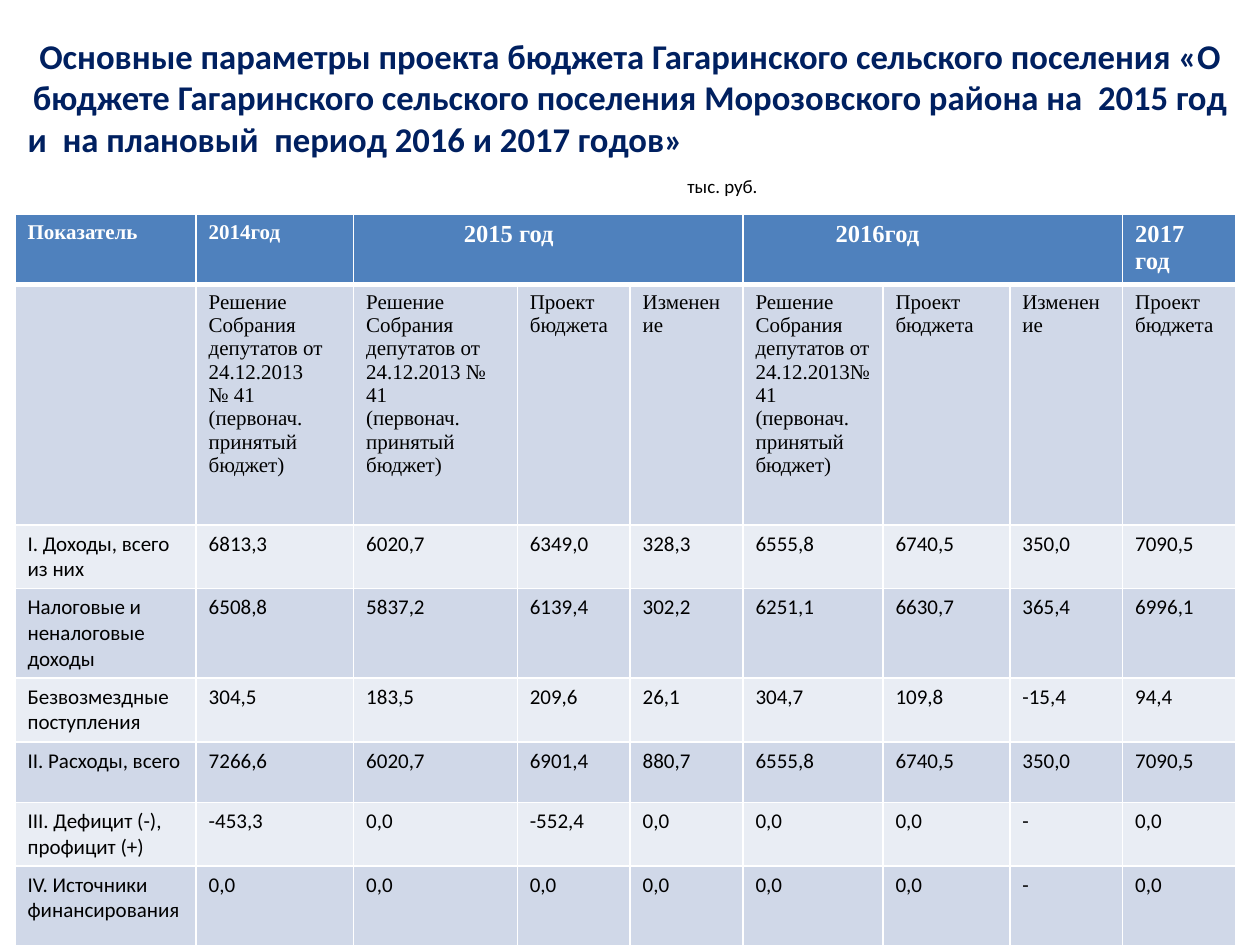
from dataclasses import dataclass

from lxml import etree
from pptx import Presentation
from pptx.dml.color import RGBColor
from pptx.enum.text import MSO_ANCHOR, MSO_AUTO_SIZE, PP_ALIGN
from pptx.oxml.ns import qn
from pptx.util import Pt

LEFT, CENTER = PP_ALIGN.LEFT, PP_ALIGN.CENTER
MIDDLE, NO_AUTOFIT = MSO_ANCHOR.MIDDLE, MSO_AUTO_SIZE.NONE
TITLE_ONLY = 5


@dataclass(frozen=True)
class Theme:
    sans: str = "Calibri"
    serif: str = "Times New Roman"
    navy: str = "002060"
    black: str = "000000"
    white: str = "FFFFFF"
    header: str = "4F81BD"
    dark_band: str = "D0D8E8"
    light_band: str = "E9EDF4"
    title_size: float = 19.8
    unit_size: float = 10.8
    year_size: float = 14
    table_size: float = 12


THEME = Theme()
TITLE_STYLE = dict(name=THEME.sans, size=Pt(THEME.title_size), bold=True, color=THEME.navy)
UNIT_STYLE = dict(name=THEME.sans, size=Pt(THEME.unit_size), bold=False, color=THEME.black)
HEADER_STYLE = dict(name=THEME.serif, size=Pt(THEME.table_size), bold=True, color=THEME.white)
YEAR_STYLE = {**HEADER_STYLE, "size": Pt(THEME.year_size)}
DECISION_STYLE = {**HEADER_STYLE, "bold": False, "color": THEME.black}
BODY_STYLE = {**DECISION_STYLE, "name": THEME.sans}

TITLE_LINES = [
    ("Основные параметры проекта бюджета Гагаринского сельского поселения «О бюджете "
     "Гагаринского сельского поселения Морозовского района на  2015 год", CENTER),
    ("и  на плановый  период 2016 и 2017 годов»", LEFT),
]
UNIT = "тыс. руб."
UNIT_INDENT = 377

COLUMN_WIDTHS = [103.5, 90, 93.5, 64.5, 64.5, 80, 72.5, 64.5, 64.5]
ROW_HEIGHTS = [40, 137.5, 36.5, 50, 36.5, 34.5, 36.5, 49]

# column: (text, style, left margin, columns covered)
HEADERS = {
    0: ("Показатель", HEADER_STYLE, 7.2, 1),
    1: ("2014год", HEADER_STYLE, 7.2, 1),
    2: ("2015 год", YEAR_STYLE, 63, 3),
    5: ("2016год", YEAR_STYLE, 53, 3),
    8: ("2017 год", YEAR_STYLE, 7.2, 1),
}
ADOPTED = "(первонач. принятый бюджет)"
SUBHEADERS = [
    "",
    f"Решение Собрания депутатов от 24.12.2013\n№ 41\n{ADOPTED}",
    f"Решение Собрания депутатов от 24.12.2013 № 41\n{ADOPTED}",
    "Проект\nбюджета",
    "Изменение",
    f"Решение Собрания депутатов от 24.12.2013№ 41\n{ADOPTED}",
    "Проект бюджета",
    "Изменение",
    "Проект бюджета",
]
BUDGET = [
    ("I. Доходы, всего из них", "6813,3 6020,7 6349,0 328,3 6555,8 6740,5 350,0 7090,5"),
    ("Налоговые и неналоговые доходы", "6508,8 5837,2 6139,4 302,2 6251,1 6630,7 365,4 6996,1"),
    ("Безвозмездные поступления", "304,5 183,5 209,6 26,1 304,7 109,8 -15,4 94,4"),
    ("II. Расходы, всего", "7266,6 6020,7 6901,4 880,7 6555,8 6740,5 350,0 7090,5"),
    ("III. Дефицит (-), профицит (+)", "-453,3 0,0 -552,4 0,0 0,0 0,0 - 0,0"),
    ("IV. Источники финансирования", "0,0 0,0 0,0 0,0 0,0 0,0 - 0,0"),
]


def apply_font(font, style):
    for name, value in style.items():
        if name == "color":
            font.color.rgb = RGBColor.from_string(value)
        else:
            setattr(font, name, value)


def add_span(para, text, style):
    span = para.add_run()
    span.text = text
    apply_font(span.font, style)


def add_title(page):
    title = page.shapes.title
    place = dict(left=Pt(8.6), top=Pt(20.9), width=Pt(702.8), height=Pt(90.7))
    for name, value in place.items():
        setattr(title, name, value)
    frame = title.text_frame
    layout = dict(word_wrap=True, auto_size=NO_AUTOFIT, vertical_anchor=MIDDLE)
    for name, value in layout.items():
        setattr(frame, name, value)
    for index, (text, alignment) in enumerate(TITLE_LINES):
        para = frame.add_paragraph() if index else frame.paragraphs[0]
        para.alignment = alignment
        add_span(para, text, TITLE_STYLE)
    unit = frame.add_paragraph()
    unit.alignment = LEFT
    unit.space_before = Pt(8.6)
    unit._p.get_or_add_pPr().set("marL", str(Pt(UNIT_INDENT)))
    add_span(unit, UNIT, UNIT_STYLE)


def set_borders(cell, top=1, bottom=1):
    """Draw white cell edges; widths in points."""
    properties = cell._tc.get_or_add_tcPr()
    edges = dict(lnL=1, lnR=1, lnT=top, lnB=bottom)
    for index, (tag, width) in enumerate(edges.items()):
        line = etree.Element(qn(f"a:{tag}"), w=str(Pt(width)))
        fill = etree.SubElement(line, qn("a:solidFill"))
        etree.SubElement(fill, qn("a:srgbClr"), val=THEME.white)
        properties.insert(index, line)


def fill_cell(cell, text, style):
    for index, line in enumerate(text.split("\n")):
        para = cell.text_frame.add_paragraph() if index else cell.text_frame.paragraphs[0]
        if line:
            add_span(para, line, style)
        else:
            apply_font(para.font, style)


def format_grid(table):
    for column, width in zip(table.columns, COLUMN_WIDTHS):
        column.width = Pt(width)
    for index, (row, height) in enumerate(zip(table.rows, ROW_HEIGHTS)):
        row.height = Pt(height)
        band = THEME.dark_band if index % 2 else THEME.light_band
        color = band if index else THEME.header
        for cell in row.cells:
            cell.fill.solid()
            cell.fill.fore_color.rgb = RGBColor.from_string(color)
            set_borders(cell, top=3 if index == 1 else 1, bottom=1 if index else 3)


def add_budget_table(page):
    frame = page.shapes.add_table(
        len(ROW_HEIGHTS), len(COLUMN_WIDTHS), Pt(8.6), Pt(122.4),
        Pt(sum(COLUMN_WIDTHS)), Pt(sum(ROW_HEIGHTS)))
    table = frame.table
    format_grid(table)
    for column, (text, style, margin, covered) in HEADERS.items():
        cell = table.cell(0, column)
        if covered > 1:
            cell.merge(table.cell(0, column + covered - 1))
        cell.margin_left = Pt(margin)
        fill_cell(cell, text, style)
    for column, text in enumerate(SUBHEADERS):
        fill_cell(table.cell(1, column), text, DECISION_STYLE)
    for row, (label, values) in enumerate(BUDGET, start=2):
        for column, text in enumerate([label, *values.split()]):
            fill_cell(table.cell(row, column), text, BODY_STYLE)


def main():
    deck = Presentation()
    deck.slide_width, deck.slide_height = Pt(720), Pt(540)
    page = deck.slides.add_slide(deck.slide_layouts[TITLE_ONLY])
    add_title(page)
    add_budget_table(page)
    deck.save("out.pptx")


if __name__ == "__main__":
    main()
